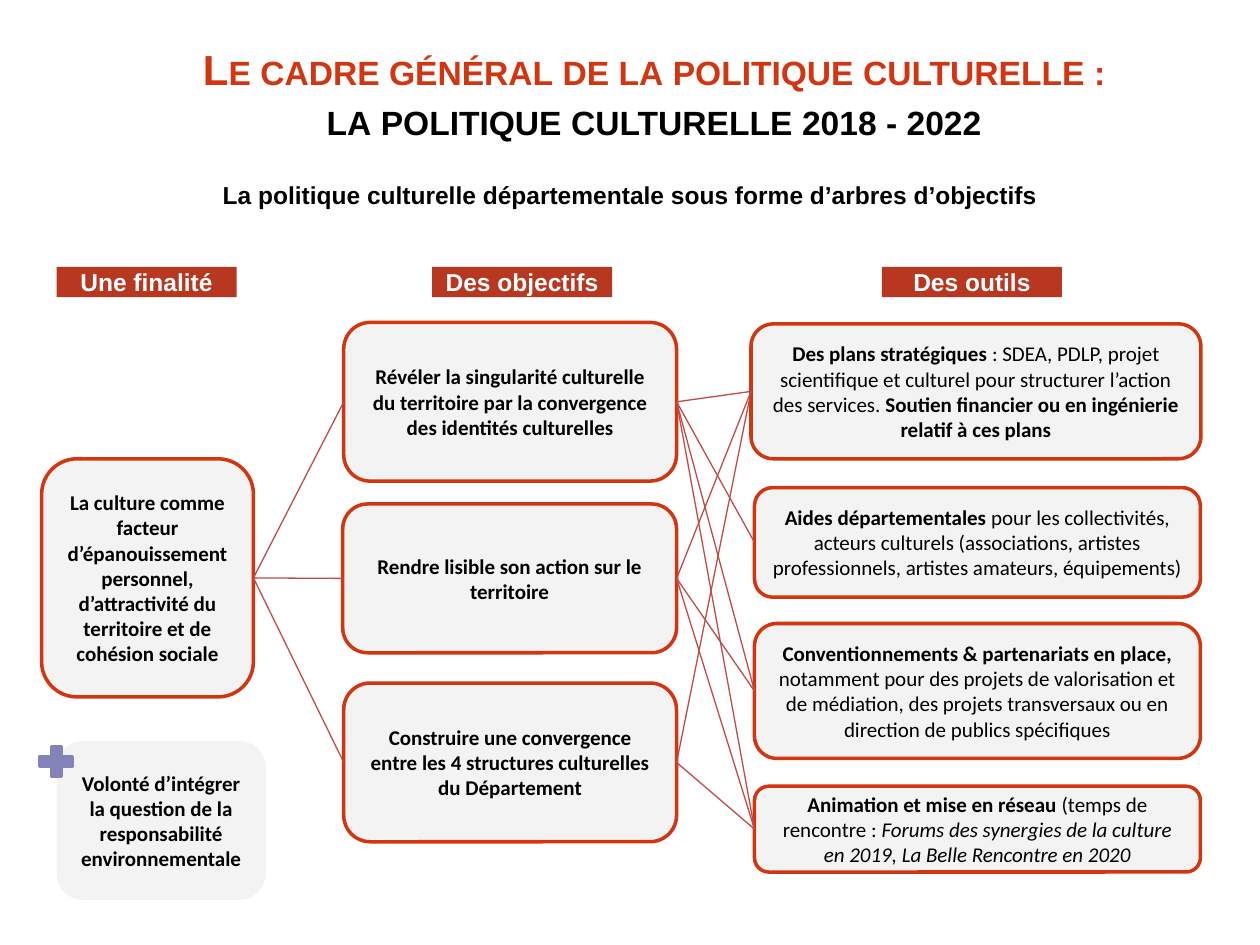
from lxml.etree import SubElement
from pptx import Presentation
from pptx.dml.color import RGBColor
from pptx.enum.shapes import MSO_CONNECTOR, MSO_SHAPE
from pptx.enum.text import MSO_ANCHOR, MSO_AUTO_SIZE, PP_ALIGN
from pptx.oxml.ns import qn
from pptx.util import Cm, Pt

RED, BRICK, LINK, GREY, MAUVE = "D33510", "B73720", "BF4C48", "D9D9D9", "8483B9"
BLACK, WHITE = "000000", "FFFFFF"

TITLE = [("Le cadre général de la politique culturelle :", RED),
         ("la politique culturelle 2018 - 2022", BLACK)]
SUBTITLE = "La politique culturelle départementale sous forme d’arbres d’objectifs"
HEADINGS = [("Une finalité", 1.14), ("Des objectifs", 8.71), ("Des outils", 17.78)]

PURPOSE = ((0.84, 9.25, 4.27, 4.8),
           [[("La culture comme facteur d’épanouissement personnel,", "b")],
            [("d’attractivité du territoire et de cohésion sociale", "b")]])
GOALS = [
    ((6.93, 6.5, 6.71, 3.2),
     [[("Révéler la singularité culturelle du territoire par la convergence "
        "des identités culturelles", "b")]]),
    ((6.91, 10.16, 6.73, 3),
     [[("Rendre lisible son action sur le territoire", "b")]]),
    ((6.93, 13.77, 6.71, 3.2),
     [[("Construire une convergence entre les 4 structures culturelles "
        "du Département", "b")]]),
]
TOOLS = [
    ((15.14, 6.53, 9.07, 2.72),
     [[("Des plans stratégiques ", "b"),
       (": SDEA, PDLP, projet scientifique et culturel pour structurer "
        "l’action des services.", ""),
       (" Soutien financier ou en ingénierie relatif à ces plans", "b")]]),
    ((15.21, 9.83, 8.99, 2.21),
     [[("Aides départementales ", "b"),
       ("pour les collectivités, acteurs culturels (associations, artistes "
        "professionnels, artistes amateurs, équipements)", "")]]),
    ((15.21, 12.57, 8.99, 2.72),
     [[("Conventionnements & partenariats en place, ", "b"),
       ("notamment pour des projets de valorisation et de médiation, des projets "
        "transversaux ou en direction de publics spécifiques", "")]]),
    ((15.21, 15.85, 8.99, 1.73),
     [[("Animation et mise en réseau ", "b"),
       ("(temps de rencontre : ", ""),
       ("Forums des synergies de la culture en 2019, La Belle Rencontre en 2020", "i")]]),
]
ENVIRONMENT = ((1.14, 14.94, 4.22, 3.2),
               [[("Volonté d’intégrer la question de la responsabilité "
                  "environnementale", "b")]])
TOOLS_BY_GOAL = [(0, 1, 2, 3), (0, 2, 3), (0, 3)]
LEFT_SITE, RIGHT_SITE = 1, 3


def rgb(value):
    return RGBColor.from_string(value)


def style(font, name, size, color, bold=None):
    font.name, font.size, font.bold = name, Pt(size), bold
    font.color.rgb = rgb(color)


def add_block(slide, preset, place, fill, line=None):
    block = slide.shapes.add_shape(preset, *map(Cm, place))
    block.shadow.inherit = False
    block.fill.solid()
    block.fill.fore_color.rgb = rgb(fill)
    if line:
        block.line.color.rgb = rgb(line)
        block.line.width = Pt(2)
    else:
        block.line.fill.background()
    return block


def add_card(slide, place, paragraphs, line=RED):
    card = add_block(slide, MSO_SHAPE.ROUNDED_RECTANGLE, place, GREY, line)
    tint = card.fill._xPr.find(qn("a:solidFill"))[0]
    SubElement(tint, qn("a:alpha")).set("val", "29000")
    frame = card.text_frame
    frame.word_wrap = True
    frame.vertical_anchor = MSO_ANCHOR.MIDDLE
    for i, runs in enumerate(paragraphs):
        paragraph = frame.add_paragraph() if i else frame.paragraphs[0]
        paragraph.alignment = PP_ALIGN.CENTER
        style(paragraph.font, "Calibri", 12, BLACK)
        for text, marks in runs:
            run = paragraph.add_run()
            run.text = text
            style(run.font, "Calibri", 12, BLACK, "b" in marks)
            run.font.italic = "i" in marks
    return card


def add_line(slide, text, frame, color):
    frame.word_wrap = True
    paragraph = frame.paragraphs[0]
    paragraph.text = text
    paragraph.alignment = PP_ALIGN.CENTER
    style(paragraph.font, "Arial", 14, color, True)


def link(slide, start, end):
    branch = slide.shapes.add_connector(MSO_CONNECTOR.STRAIGHT, 0, 0, 0, 0)
    branch.begin_connect(start, RIGHT_SITE)
    branch.end_connect(end, LEFT_SITE)
    branch.line.color.rgb = rgb(LINK)
    branch.line.width = Pt(0.75)
    SubElement(branch._element.spPr, qn("a:effectLst"))


def add_title(slide):
    title = slide.shapes.title
    title.left, title.top, title.width, title.height = map(Cm, (1.88, 0.3, 22.61, 3.18))
    frame = title.text_frame
    frame.auto_size = MSO_AUTO_SIZE.NONE
    frame.vertical_anchor = MSO_ANCHOR.MIDDLE
    paragraph = frame.paragraphs[0]
    paragraph.alignment = PP_ALIGN.CENTER
    for i, (text, color) in enumerate(TITLE):
        if i:
            paragraph.add_line_break()
        run = paragraph.add_run()
        run.text = text
        style(run.font, "Arial", 24, color, True)
        run._r.get_or_add_rPr().set("cap", "small")


def main():
    deck = Presentation()
    deck.slide_width, deck.slide_height = Cm(25.4), Cm(19.05)
    slide = deck.slides.add_slide(deck.slide_layouts[5])

    add_title(slide)
    subtitle = slide.shapes.add_textbox(*map(Cm, (1.4, 3.51, 22.61, 0.86)))
    add_line(slide, SUBTITLE, subtitle.text_frame, BLACK)

    for text, left in HEADINGS:
        heading = add_block(slide, MSO_SHAPE.RECTANGLE, (left, 5.38, 3.63, 0.61), BRICK)
        frame = heading.text_frame
        frame.margin_left = frame.margin_right = frame.margin_top = frame.margin_bottom = 0
        frame.vertical_anchor = MSO_ANCHOR.TOP
        add_line(slide, text, frame, WHITE)

    purpose = add_card(slide, *PURPOSE)
    goals = [add_card(slide, *goal) for goal in GOALS]
    tools = [add_card(slide, *tool) for tool in TOOLS]
    for goal, targets in zip(goals, TOOLS_BY_GOAL):
        link(slide, purpose, goal)
        for target in targets:
            link(slide, goal, tools[target])

    add_card(slide, *ENVIRONMENT, line=None)
    add_block(slide, MSO_SHAPE.MATH_PLUS, (0.69, 14.94, 0.89, 0.81), MAUVE, MAUVE)
    deck.save("out.pptx")


if __name__ == "__main__":
    main()
